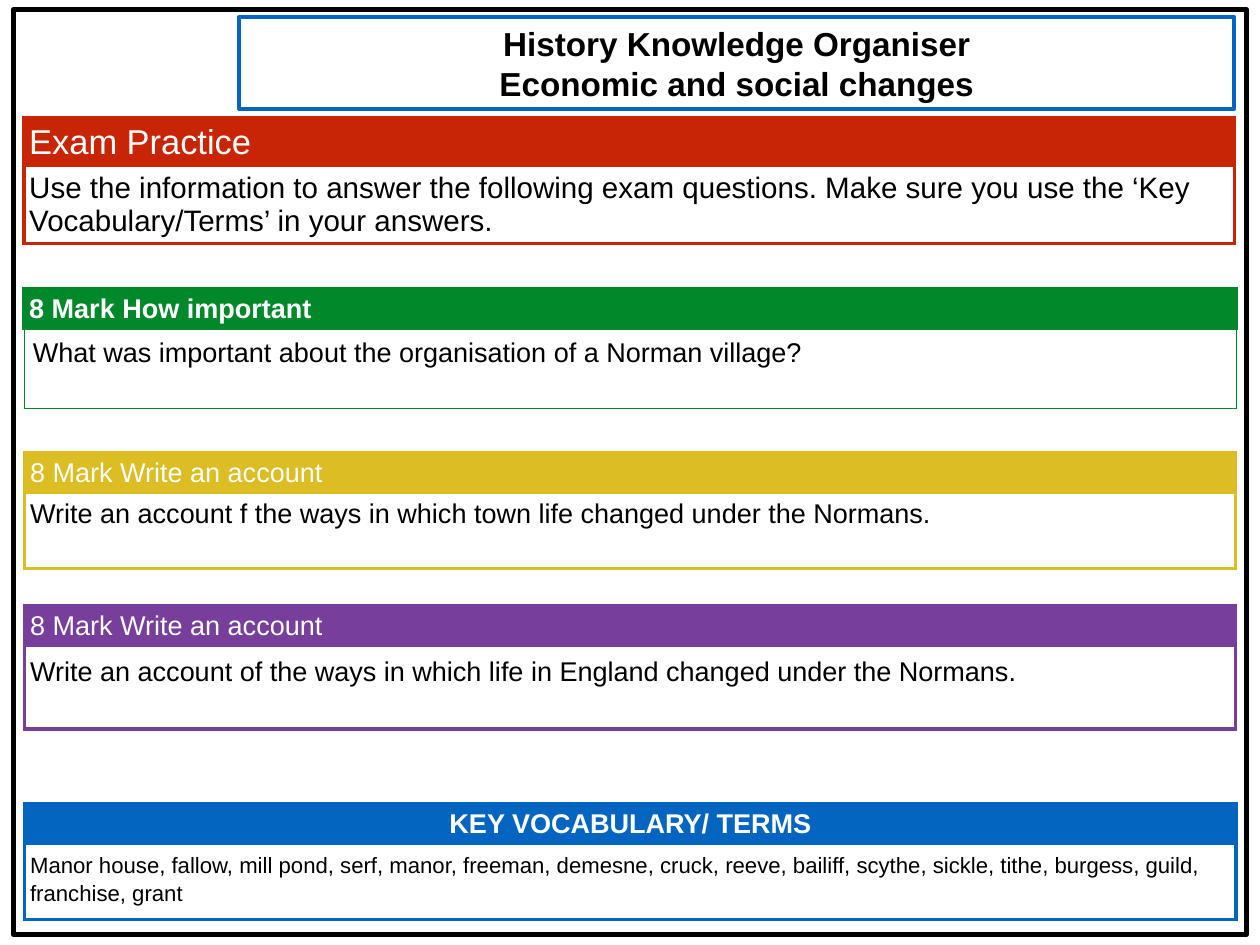
"""Build a history knowledge organiser slide with exam questions and key terms."""
import pptx
import pptx.dml.color
import pptx.enum.shapes
import pptx.enum.text
import pptx.oxml
import pptx.oxml.ns
import pptx.util

Inches = pptx.util.Inches
Pt = pptx.util.Pt
MIDDLE = pptx.enum.text.MSO_ANCHOR.MIDDLE
TOP = pptx.enum.text.MSO_ANCHOR.TOP
CENTER = pptx.enum.text.PP_ALIGN.CENTER
LEFT = pptx.enum.text.PP_ALIGN.LEFT


def color(value):
    return pptx.dml.color.RGBColor.from_string(value)


class Organiser:
    """Holds the shared style and the slide being drawn."""

    font = "Arial"
    ink = "000000"
    paper = "FFFFFF"
    inset = 0.06
    thick = 3
    thin = 0.75

    def __init__(self, s):
        self.s = s

    def set_text(self, tf, text, size, ink, bold=False, align=LEFT, spacing=None, before=None):
        tf.text = text
        for p in tf.paragraphs:
            p.alignment = align
            if spacing:
                p.line_spacing = spacing
            if before:
                p.space_before = Pt(before)
            for r in p.runs:
                r.font.name = self.font
                r.font.size = Pt(size)
                r.font.bold = bold
                r.font.color.rgb = color(ink)

    def pad(self, box, inset):
        box.margin_left = box.margin_right = Inches(inset)
        box.margin_top = box.margin_bottom = Inches(inset)

    def frame(self, x, y, w, h, line, width):
        rect = pptx.enum.shapes.MSO_SHAPE.RECTANGLE
        sp = self.s.shapes.add_shape(rect, Inches(x), Inches(y), Inches(w), Inches(h))
        sp.shadow.inherit = False
        sp.fill.background()
        sp.line.color.rgb = color(line)
        sp.line.width = Pt(width)
        return sp

    def title(self, x, y, w, h, line, text):
        tf = self.frame(x, y, w, h, line, self.thick).text_frame
        tf.word_wrap = True
        tf.vertical_anchor = MIDDLE
        self.pad(tf, self.inset)
        self.set_text(tf, text, 27, self.ink, bold=True, align=CENTER)

    def borders(self, cell, line, widths):
        tcPr = cell._tc.get_or_add_tcPr()
        for i, (side, width) in enumerate(zip("LRTB", widths)):
            tcPr.insert(i, pptx.oxml.parse_xml(
                f'<a:ln{side} {pptx.oxml.ns.nsdecls("a")} w="{int(Pt(width))}">'
                f'<a:solidFill><a:srgbClr val="{line}"/></a:solidFill></a:ln{side}>'))

    def cell(self, cell, fill, anchor, inset, line, widths):
        cell.fill.solid()
        cell.fill.fore_color.rgb = color(fill)
        cell.vertical_anchor = anchor
        self.pad(cell, inset)
        self.borders(cell, line, widths)

    def panel(self, x, y, w, rows, hue, heading, body, body_inset=inset, body_line=thick):
        height = Inches(sum(rows))
        table = self.s.shapes.add_table(2, 1, Inches(x), Inches(y), Inches(w), height).table
        table.first_row = table.horz_banding = False
        for row, h in zip(table.rows, rows):
            row.height = Inches(h)
        head, answer = table.cell(0, 0), table.cell(1, 0)
        self.cell(head, hue, MIDDLE, self.inset, hue,
                  (self.thick, self.thick, self.thick, self.thin))
        self.cell(answer, self.paper, TOP, body_inset, hue,
                  (body_line, body_line, self.thin, body_line))
        self.set_text(head.text_frame, ink=self.paper, **heading)
        self.set_text(answer.text_frame, ink=self.ink, **body)


def main():
    prs = pptx.Presentation()
    prs.slide_width, prs.slide_height = Inches(14.22), Inches(10.67)
    page = Organiser(prs.slides.add_slide(prs.slide_layouts[6]))
    blue = "0365C0"

    page.frame(0.15, 0.11, 13.92, 10.44, page.ink, 4)
    page.title(2.7, 0.19, 11.23, 1.04, blue,
               "History Knowledge Organiser\nEconomic and social changes")
    page.panel(0.27, 1.33, 13.66, (0.54, 0.85), "C82506",
               dict(text="Exam Practice", size=28),
               dict(text="Use the information to answer the following exam questions. "
                         "Make sure you use the ‘Key Vocabulary/Terms’ in your answers.",
                    size=24))
    page.panel(0.27, 3.26, 13.68, (0.45, 0.89), "00882B",
               dict(text="8 Mark How important", size=22, bold=True),
               dict(text="What was important about the organisation of a Norman village?",
                    size=22),
               body_inset=0.1, body_line=page.thin)
    page.panel(0.28, 5.11, 13.66, (0.46, 0.85), "DCBD23",
               dict(text="8 Mark Write an account", size=22),
               dict(text="Write an account f the ways in which town life changed "
                         "under the Normans.", size=22))
    page.panel(0.28, 6.84, 13.66, (0.45, 0.93), "773F9B",
               dict(text="8 Mark Write an account", size=22),
               dict(text="Write an account of the ways in which life in England changed "
                         "under the Normans.", size=22, spacing=1.15))
    page.panel(0.28, 9.07, 13.67, (0.45, 0.85), blue,
               dict(text="KEY VOCABULARY/ TERMS", size=22, bold=True, align=CENTER),
               dict(text="Manor house, fallow, mill pond, serf, manor, freeman, demesne, "
                         "cruck, reeve, bailiff, scythe, sickle, tithe, burgess, guild, "
                         "franchise, grant", size=18, spacing=1.15, before=8))
    prs.save("out.pptx")


if __name__ == "__main__":
    main()
